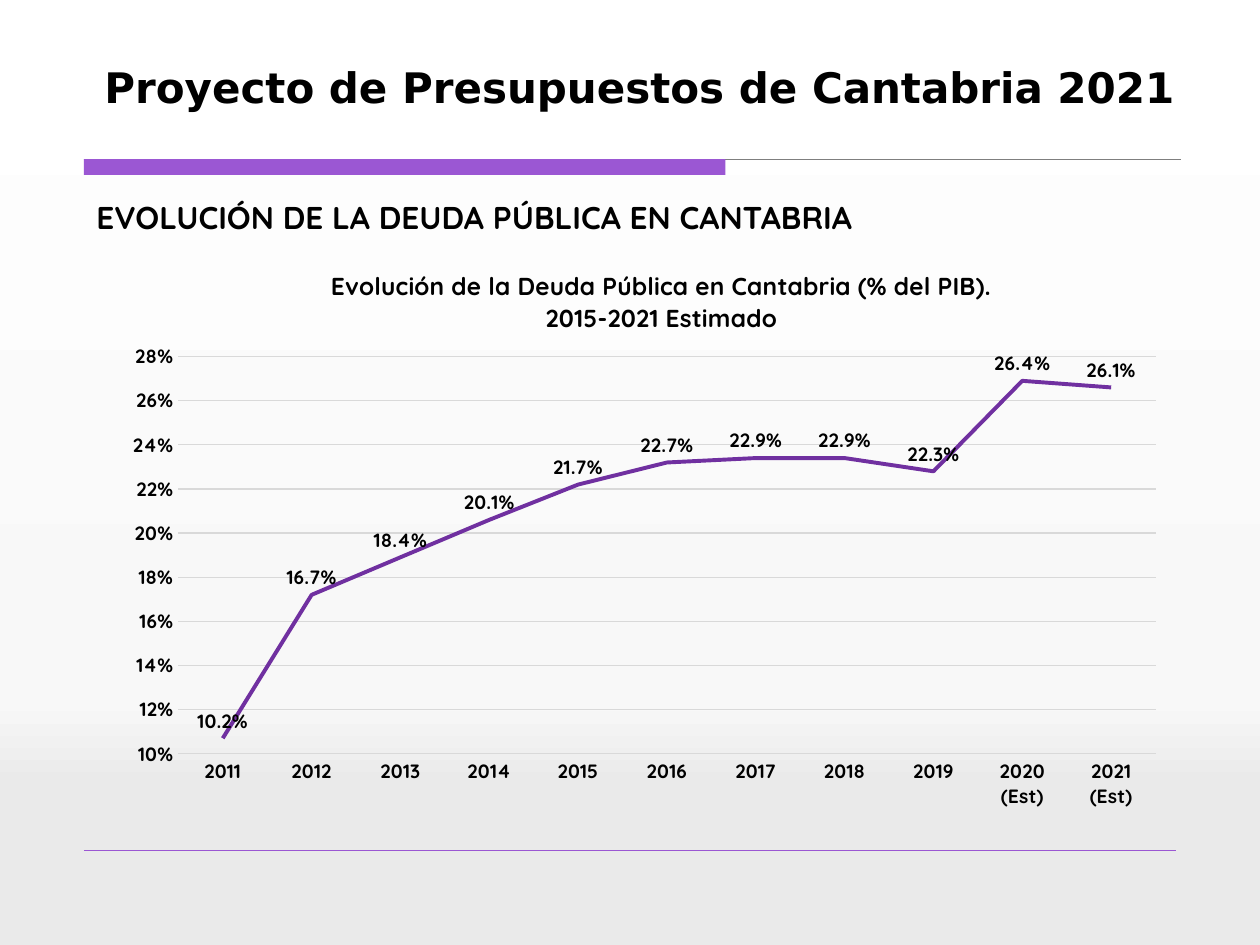
import pptx
import pptx.chart.data
import pptx.dml.color
import pptx.enum.chart
import pptx.enum.shapes
import pptx.enum.text
import pptx.oxml
import pptx.oxml.ns
import pptx.util
from pptx.util import Pt

COLORS = {
    "text": "000000",
    "accent": "9B57D3",
    "rule": "7F7F7F",
    "series": "7030A0",
    "grid": "D9D9D9",
}
BACKGROUND_STOPS = [(0, "FFFFFF"), (74, "F8F8F8"), (83, "EAEAEA"), (100, "EAEAEA")]
BODY_FONT = "Quicksand"
TITLE_FONT = "DejaVu Sans"

DEBT_BY_YEAR = {
    "2011": 0.102, "2012": 0.167, "2013": 0.184, "2014": 0.201,
    "2015": 0.217, "2016": 0.227, "2017": 0.229, "2018": 0.229,
    "2019": 0.223, "2020 (Est)": 0.264, "2021 (Est)": 0.261,
}


def rgb(name):
    return pptx.dml.color.RGBColor.from_string(COLORS[name])


def style_font(font, size, name=BODY_FONT):
    font.size = Pt(size)
    font.name = name
    font.bold = True
    font.color.rgb = rgb("text")


def paint_background(page):
    fill = page.background.fill
    fill.gradient()
    fill.gradient_angle = 270
    stops = page.element.find(".//" + pptx.oxml.ns.qn("a:gsLst"))
    for stop in list(stops):
        stops.remove(stop)
    for percent, color in BACKGROUND_STOPS:
        stops.append(pptx.oxml.parse_xml(
            f'<a:gs {pptx.oxml.ns.nsdecls("a")} pos="{percent * 1000}">'
            f'<a:srgbClr val="{color}"/></a:gs>'))


def add_bar(page, left, top, width, height, color):
    bar = page.shapes.add_shape(
        pptx.enum.shapes.MSO_SHAPE.RECTANGLE,
        Pt(left), Pt(top), Pt(width), Pt(height))
    bar.shadow.inherit = False
    bar.fill.solid()
    bar.fill.fore_color.rgb = rgb(color)
    bar.line.fill.background()


def add_rule(page, left, right, top, color, weight):
    rule = page.shapes.add_connector(
        pptx.enum.shapes.MSO_CONNECTOR.STRAIGHT,
        Pt(left), Pt(top), Pt(right), Pt(top))
    rule.line.color.rgb = rgb(color)
    rule.line.width = Pt(weight)
    rule.element.spPr.append(
        pptx.oxml.parse_xml(f'<a:effectLst {pptx.oxml.ns.nsdecls("a")}/>'))


def add_text(page, text, left, top, width, height, *, size, font=BODY_FONT,
             align=pptx.enum.text.PP_ALIGN.LEFT):
    box = page.shapes.add_textbox(Pt(left), Pt(top), Pt(width), Pt(height))
    box.text_frame.word_wrap = True
    para = box.text_frame.paragraphs[0]
    para.alignment = align
    span = para.add_run()
    span.text = text
    style_font(span.font, size, font)


def place_part(part, x, y, width=None, height=None):
    """Give a chart title or plot area a fixed place, in shares of the chart."""
    for old in part.findall(pptx.oxml.ns.qn("c:layout")):
        part.remove(old)
    values = [("xMode", "edge"), ("yMode", "edge"), ("x", x), ("y", y)]
    if width is not None:
        values = [("layoutTarget", "inner")] + values + [("w", width), ("h", height)]
    items = "".join(f'<c:{tag} val="{value}"/>' for tag, value in values)
    layout = pptx.oxml.parse_xml(
        f'<c:layout {pptx.oxml.ns.nsdecls("c")}>'
        f'<c:manualLayout>{items}</c:manualLayout></c:layout>')
    text = part.find(pptx.oxml.ns.qn("c:tx"))
    if text is None:
        part.insert(0, layout)
    else:
        text.addnext(layout)


def set_chart_title(chart, lines, size):
    frame = chart.chart_title.text_frame
    for number, line in enumerate(lines):
        para = frame.add_paragraph() if number else frame.paragraphs[0]
        span = para.add_run()
        span.text = line
        style_font(span.font, size)
    chart.chart_title.include_in_layout = False
    place_part(chart.chart_title.format.element
               if hasattr(chart.chart_title.format, "element")
               else chart.element.find(".//" + pptx.oxml.ns.qn("c:title")),
               0.2, 0.04)


def style_axes(chart):
    tick_none = pptx.enum.chart.XL_TICK_MARK.NONE
    for axis in (chart.category_axis, chart.value_axis):
        axis.major_tick_mark = axis.minor_tick_mark = tick_none
        style_font(axis.tick_labels.font, 11)
    chart.category_axis.format.line.color.rgb = rgb("grid")
    chart.category_axis.format.line.width = Pt(0.75)

    values = chart.value_axis
    values.minimum_scale, values.maximum_scale = 0.095, 0.275
    values.major_unit = 0.02
    values.tick_labels.number_format = "0%"
    values.tick_labels.number_format_is_linked = False
    values.format.line.fill.background()
    values.major_gridlines.format.line.color.rgb = rgb("grid")
    values.major_gridlines.format.line.width = Pt(0.75)


def style_series(series):
    series.smooth = False
    series.marker.style = pptx.enum.chart.XL_MARKER_STYLE.NONE
    series.format.line.color.rgb = rgb("series")
    series.format.line.width = Pt(2.25)
    labels = series.data_labels
    labels.show_value = True
    labels.position = pptx.enum.chart.XL_LABEL_POSITION.ABOVE
    labels.number_format = "0.0%"
    labels.number_format_is_linked = False
    style_font(labels.font, 11)


def add_debt_chart(page, left, top, width, height):
    data = pptx.chart.data.CategoryChartData(number_format="0.0%")
    data.categories = list(DEBT_BY_YEAR)
    data.add_series("Deuda (% del PIB)", list(DEBT_BY_YEAR.values()))
    chart = page.shapes.add_chart(
        pptx.enum.chart.XL_CHART_TYPE.LINE,
        Pt(left), Pt(top), Pt(width), Pt(height), data).chart
    chart.has_legend = False
    style_font(chart.font, 11)
    set_chart_title(chart, ["Evolución de la Deuda Pública en Cantabria (% del PIB).",
                            "2015-2021 Estimado"], 14)
    style_axes(chart)
    chart.plots[0].vary_by_categories = False
    style_series(chart.plots[0].series[0])
    plot_area = chart.element.find(".//" + pptx.oxml.ns.qn("c:plotArea"))
    place_part(plot_area, 0.06, 0.2, 0.92, 0.69)


def main():
    deck = pptx.Presentation()
    deck.slide_width, deck.slide_height = Pt(720), Pt(540)
    page = deck.slides.add_slide(deck.slide_layouts[6])
    paint_background(page)

    # Decorative bar and rules
    add_rule(page, 48, 675, 91.3, "rule", 0.5)
    add_bar(page, 48, 91, 366.5, 9, "accent")
    add_rule(page, 48, 672, 486, "accent", 0.25)

    # Headings
    add_text(page, "Proyecto de Presupuestos de Cantabria 2021", 48, 31.5, 635, 80,
             size=24, font=TITLE_FONT, align=pptx.enum.text.PP_ALIGN.CENTER)
    add_text(page, "EVOLUCIÓN DE LA DEUDA PÚBLICA EN CANTABRIA", 48, 109.5, 635, 29,
             size=18)

    # Debt chart
    add_debt_chart(page, 65.5, 138, 607, 329)

    deck.save("out.pptx")


if __name__ == "__main__":
    main()
